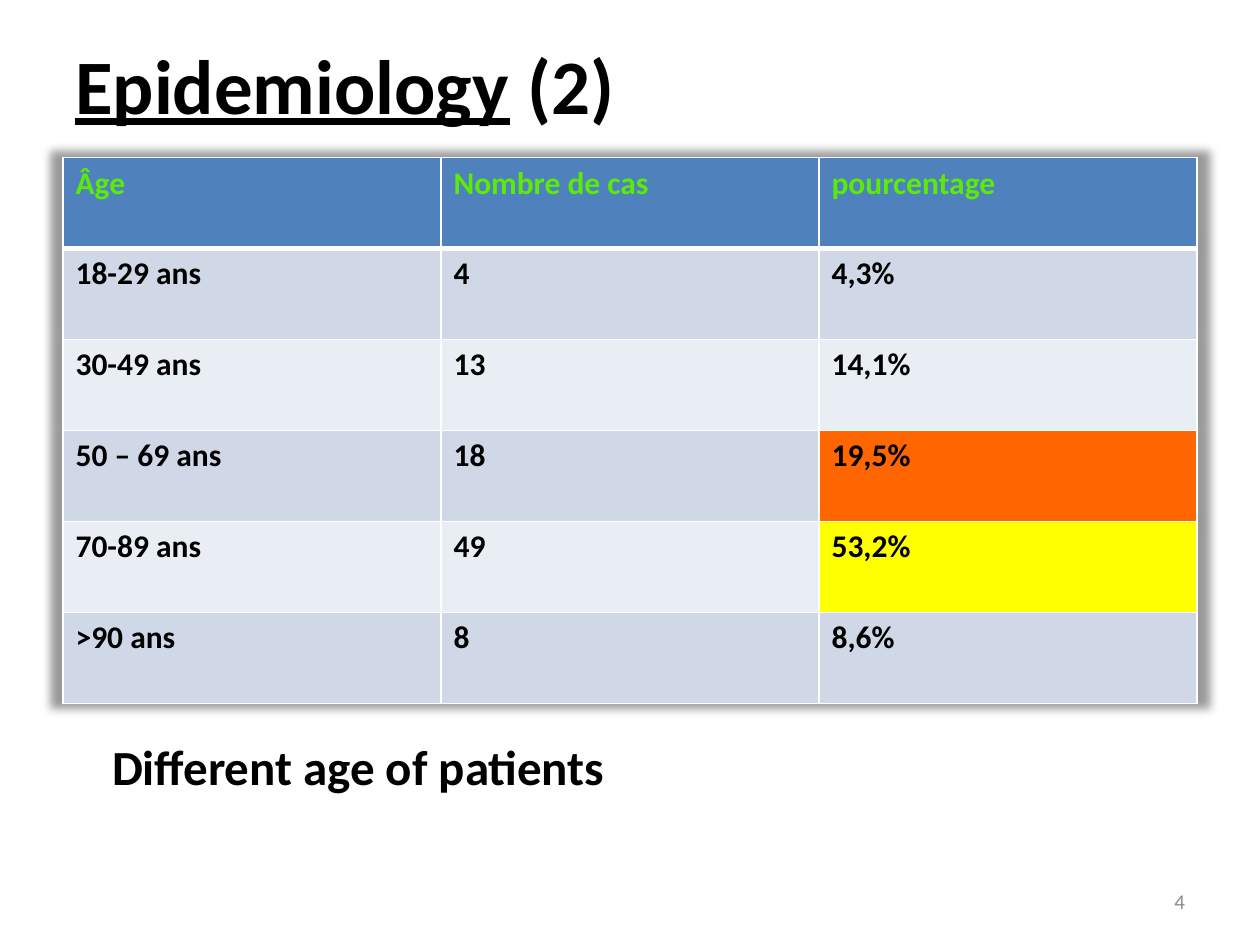
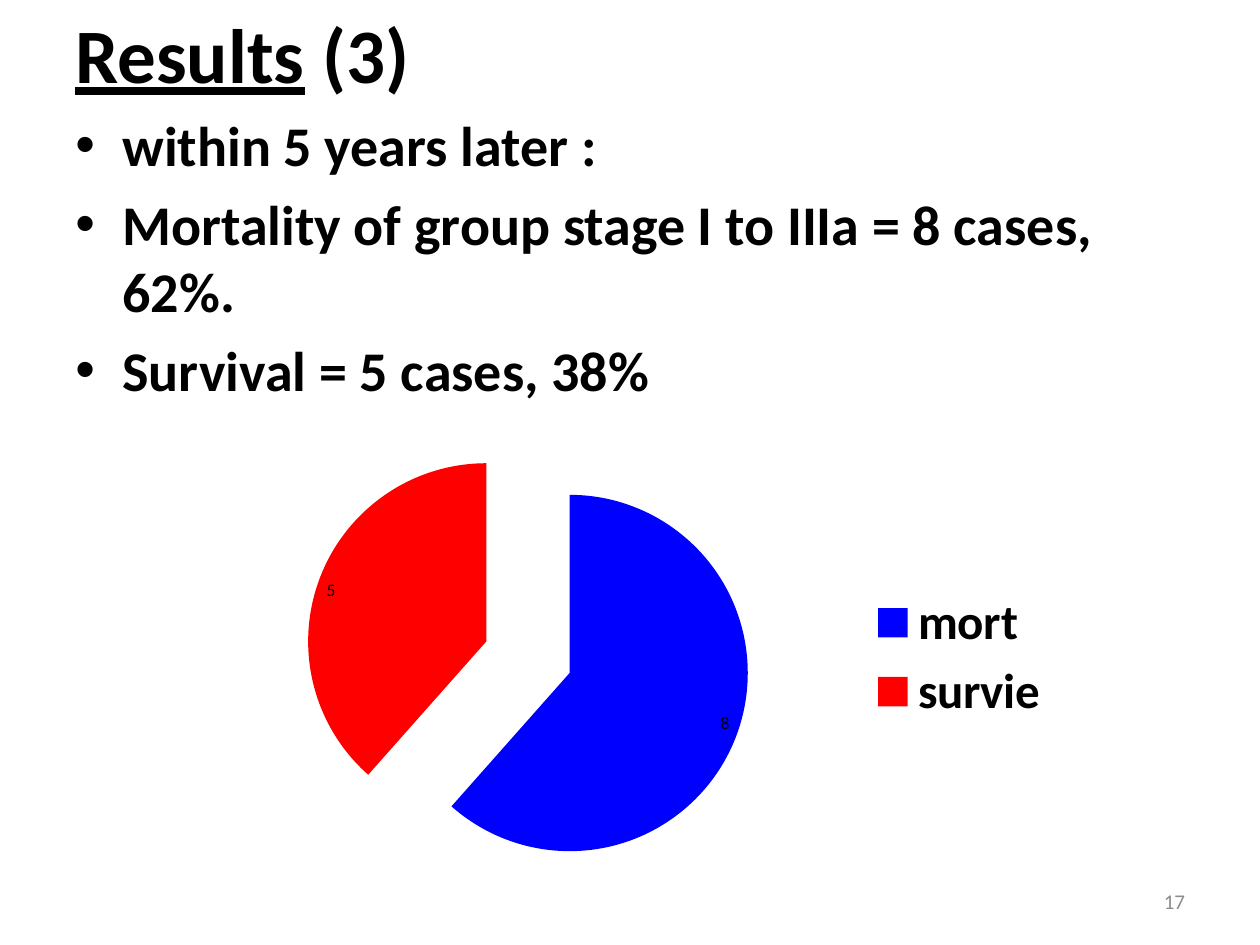
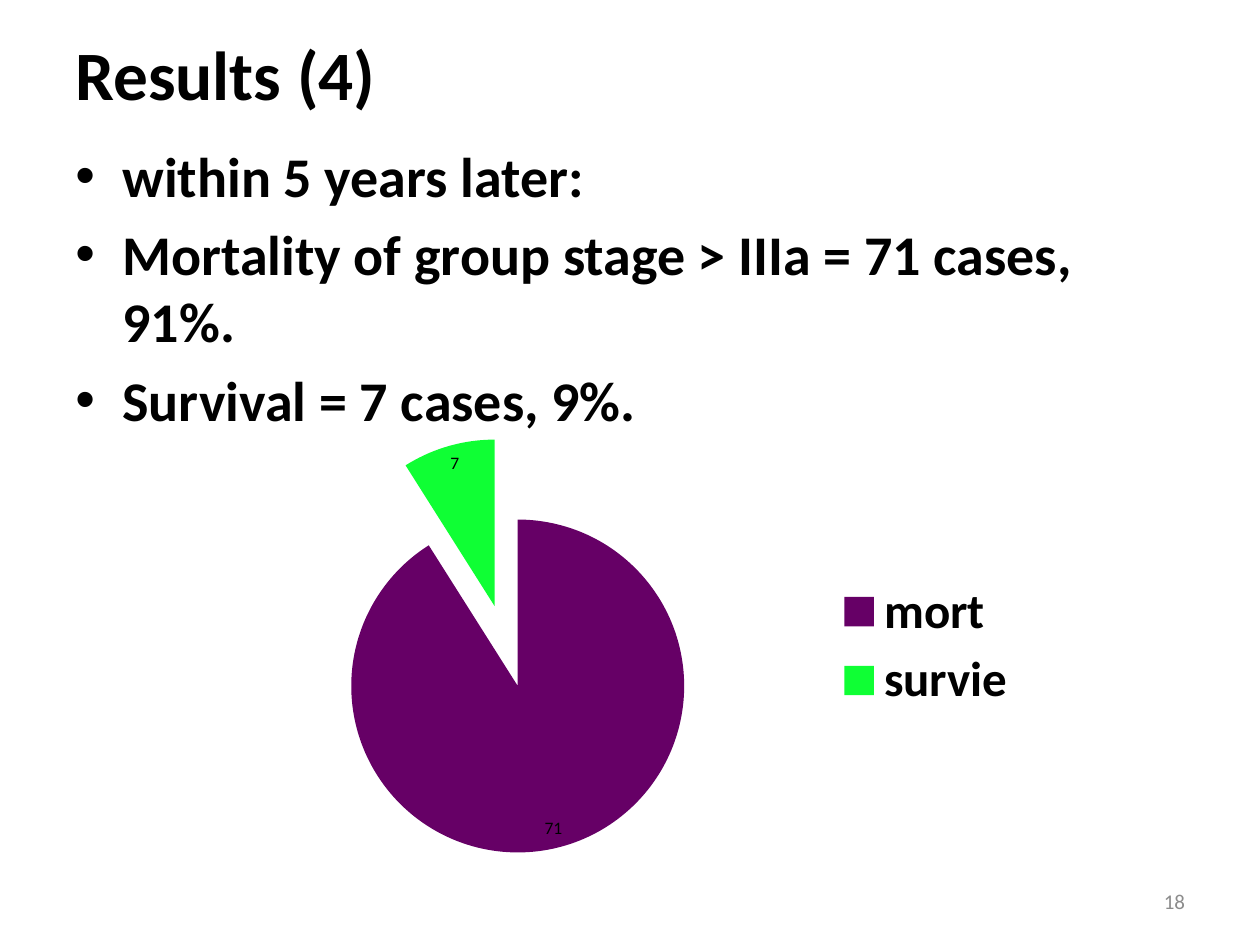
from dataclasses import dataclass

from lxml import etree
from pptx import Presentation
from pptx.chart.data import CategoryChartData
from pptx.dml.color import RGBColor
from pptx.enum.chart import XL_CHART_TYPE, XL_LABEL_POSITION, XL_LEGEND_POSITION
from pptx.enum.text import MSO_ANCHOR, MSO_AUTO_SIZE, PP_ALIGN
from pptx.oxml import parse_xml
from pptx.oxml.ns import nsdecls, qn
from pptx.util import Cm, Pt

PIE = XL_CHART_TYPE.PIE
INSIDE_END = XL_LABEL_POSITION.INSIDE_END
LEGEND_RIGHT = XL_LEGEND_POSITION.RIGHT
TOP, MIDDLE = MSO_ANCHOR.TOP, MSO_ANCHOR.MIDDLE
FIT_SHAPE = MSO_AUTO_SIZE.SHAPE_TO_FIT_TEXT
LEFT, RIGHT, JUSTIFY = PP_ALIGN.LEFT, PP_ALIGN.RIGHT, PP_ALIGN.JUSTIFY


@dataclass(frozen=True)
class Theme:
    font: str = "Calibri"
    text: str = "000000"
    muted: str = "8C8C8C"
    border: str = "FFFFFF"
    header_fill: str = "4F81BD"
    header_text: str = "5BEB09"
    bands: tuple[str, str] = ("D0D8E8", "E9EDF4")
    title_size: float = 44
    small_title_size: float = 39.6
    body_size: float = 32
    large_size: float = 28
    table_size: float = 18
    number_size: float = 12
    label_size: float = 10


THEME = Theme()


@dataclass(frozen=True)
class Box:
    """Position and size in centimetres."""
    left: float
    top: float
    width: float
    height: float

    def lengths(self) -> tuple:
        return Cm(self.left), Cm(self.top), Cm(self.width), Cm(self.height)


@dataclass(frozen=True)
class TextRun:
    text: str
    size: float
    color: str = THEME.text
    bold: bool = True
    underline: bool = False


@dataclass(frozen=True)
class Slice:
    name: str
    value: int
    color: str


@dataclass(frozen=True)
class ResultSlide:
    title: list[TextRun]
    title_box: Box
    bullets: list[str]
    body_box: Box
    slices: list[Slice]
    chart_box: Box
    number: int


# Shared text helpers
def style_font(font, size: float, color: str, bold: bool) -> None:
    font.name = THEME.font
    font.size = Pt(size)
    font.bold = bold
    font.color.rgb = RGBColor.from_string(color)


def add_runs(paragraph, runs: list[TextRun]) -> None:
    for item in runs:
        run = paragraph.add_run()
        run.text = item.text
        style_font(run.font, item.size, item.color, item.bold)
        run.font.underline = item.underline


def add_text(slide, box: Box, runs: list[TextRun], anchor=TOP, align=LEFT):
    frame = slide.shapes.add_textbox(*box.lengths()).text_frame
    frame.word_wrap = True
    frame.vertical_anchor = anchor
    frame.paragraphs[0].alignment = align
    add_runs(frame.paragraphs[0], runs)
    return frame


def numbered_title(name: str, number: int) -> list[TextRun]:
    size = THEME.title_size
    return [TextRun(name, size, underline=True), TextRun(" ", size, bold=False),
            TextRun(f"({number})", size)]


def add_page_number(slide, number: int) -> None:
    run = TextRun(str(number), THEME.number_size, THEME.muted, bold=False)
    add_text(slide, Box(18.21, 17.65, 5.93, 1.02), [run], MIDDLE, RIGHT)


def add_bullets(slide, box: Box, lines: list[str]) -> None:
    frame = add_text(slide, box, [])
    for index, line in enumerate(lines):
        paragraph = frame.paragraphs[0] if index == 0 else frame.add_paragraph()
        paragraph.space_before = Pt(6.5)
        add_runs(paragraph, [TextRun(line, THEME.body_size)])
        properties = paragraph._p.get_or_add_pPr()
        properties.set("marL", str(Cm(0.95)))
        properties.set("indent", str(-Cm(0.95)))
        etree.SubElement(properties, qn("a:buFont")).set("typeface", "Arial")
        etree.SubElement(properties, qn("a:buChar")).set("char", "•")


# Table
def fill_cell(cell, text: str, fill: str, color: str, bottom_width: float) -> None:
    cell.fill.solid()
    cell.fill.fore_color.rgb = RGBColor.from_string(fill)
    add_runs(cell.text_frame.paragraphs[0], [TextRun(text, THEME.table_size, color)])
    widths = {"lnL": 1, "lnR": 1, "lnT": 1, "lnB": bottom_width}
    for index, (side, width) in enumerate(widths.items()):
        line = parse_xml(
            f'<a:{side} {nsdecls("a")} w="{Pt(width)}"><a:solidFill>'
            f'<a:srgbClr val="{THEME.border}"/></a:solidFill></a:{side}>')
        cell._tc.get_or_add_tcPr().insert(index, line)


def add_table(slide, box: Box, rows: list[tuple], highlights: dict) -> None:
    table = slide.shapes.add_table(len(rows), len(rows[0]), *box.lengths()).table
    table._tbl.tblPr.insert(0, parse_xml(
        f'<a:effectLst {nsdecls("a")}><a:outerShdw blurRad="{Pt(5)}" sx="102000" '
        'sy="102000" algn="ctr" rotWithShape="0"><a:srgbClr val="000000">'
        '<a:alpha val="40000"/></a:srgbClr></a:outerShdw></a:effectLst>'))
    for row, values in enumerate(rows):
        header = row == 0
        band = THEME.header_fill if header else THEME.bands[(row - 1) % 2]
        for column, value in enumerate(values):
            fill_cell(table.cell(row, column), value,
                      highlights.get((row, column), band),
                      THEME.header_text if header else THEME.text,
                      3 if header else 1)


# Exploded pie chart
def add_pie(slide, box: Box, slices: list[Slice]) -> None:
    data = CategoryChartData()
    data.categories = [part.name for part in slices]
    data.add_series("Series 1", [part.value for part in slices])
    chart = slide.shapes.add_chart(PIE, *box.lengths(), data).chart
    chart.has_title = False
    style_font(chart.font, THEME.label_size, THEME.text, False)
    chart.has_legend = True
    chart.legend.position = LEGEND_RIGHT
    chart.legend.include_in_layout = False
    style_font(chart.legend.font, THEME.large_size, THEME.text, True)

    plot = chart.plots[0]
    plot.vary_by_categories = True
    plot.has_data_labels = True
    plot.data_labels.show_value = True
    plot.data_labels.show_percentage = False
    plot.data_labels.position = INSIDE_END
    style_font(plot.data_labels.font, THEME.label_size, THEME.text, False)
    series = plot.series[0]
    for index, part in enumerate(slices):
        point_format = series.points[index].format
        point_format.fill.solid()
        point_format.fill.fore_color.rgb = RGBColor.from_string(part.color)
        point_format.line.fill.background()
    first_point = series._element.find(qn("c:dPt"))
    first_point.addprevious(parse_xml(f'<c:explosion {nsdecls("c")} val="25"/>'))


# Slides
AGE_ROWS = [
    ("Âge", "Nombre de cas", "pourcentage"),
    ("18-29 ans", "4", "4,3%"),
    ("30-49 ans", "13", "14,1%"),
    ("50 – 69 ans", "18", "19,5%"),
    ("70-89 ans", "49", "53,2%"),
    (">90 ans", "8", "8,6%"),
]
AGE_HIGHLIGHTS = {(3, 2): "FF6600", (4, 2): "FFFF00"}

RESULTS = [
    ResultSlide(
        numbered_title("Results", 3), Box(1.27, 0, 22.86, 2.11),
        ["within 5 years later :",
         "Mortality of group stage I to IIIa = 8 cases, 62%.",
         "Survival = 5 cases, 38%"],
        Box(1.27, 2.11, 22.86, 14.91),
        [Slice("mort", 8, "0000FF"), Slice("survie", 5, "FF0000")],
        Box(3.91, 8.41, 17.6, 9.68), 17),
    ResultSlide(
        [TextRun("Results (4)", THEME.small_title_size)],
        Box(1.27, 0.79, 22.86, 1.37),
        ["within 5 years later:",
         "Mortality of group stage > IIIa = 71 cases, 91%.",
         "Survival = 7 cases, 9%."],
        Box(1.27, 2.72, 22.86, 14.3),
        [Slice("mort", 71, "660066"), Slice("survie", 7, "0FFF34")],
        Box(3.71, 8.48, 17.12, 9.09), 18),
]


def build_epidemiology(slide) -> None:
    add_text(slide, Box(1.27, 0.36, 22.86, 2.64),
             numbered_title("Epidemiology", 2), MIDDLE, JUSTIFY)
    add_table(slide, Box(1.27, 3.18, 22.86, 11), AGE_ROWS, AGE_HIGHLIGHTS)
    caption = add_text(slide, Box(2.01, 14.73, 11.02, 1.45),
                       [TextRun("Different age of patients", THEME.large_size)])
    caption.word_wrap = False
    caption.auto_size = FIT_SHAPE
    add_page_number(slide, 4)


def build_result(slide, result: ResultSlide) -> None:
    add_text(slide, result.title_box, result.title, MIDDLE)
    add_bullets(slide, result.body_box, result.bullets)
    add_pie(slide, result.chart_box, result.slices)
    add_page_number(slide, result.number)


def main() -> None:
    presentation = Presentation()
    presentation.slide_width = Cm(25.4)
    presentation.slide_height = Cm(19.05)
    blank = presentation.slide_layouts[6]
    build_epidemiology(presentation.slides.add_slide(blank))
    for result in RESULTS:
        build_result(presentation.slides.add_slide(blank), result)
    presentation.save("out.pptx")


if __name__ == "__main__":
    main()
